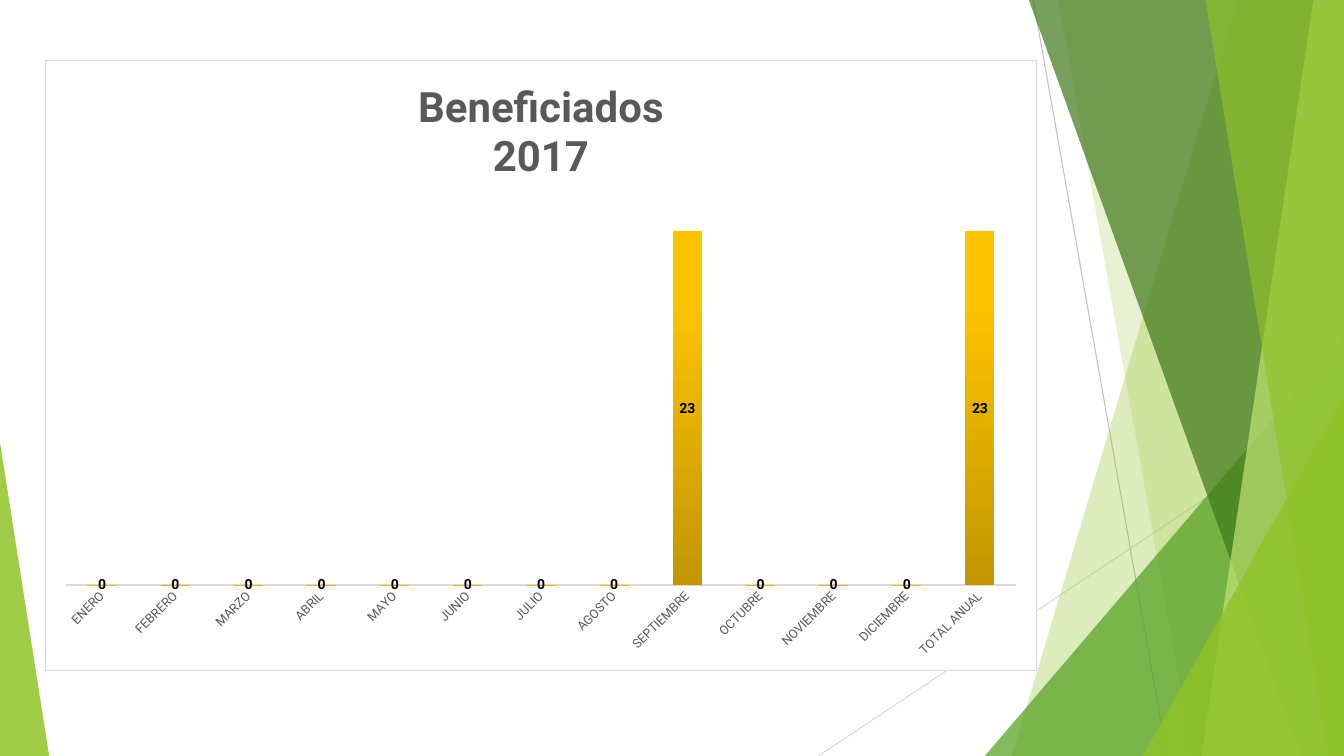
"""Build a slide with a yearly column chart beside green facets."""
from lxml import etree
from pptx import Presentation
from pptx.chart import data
from pptx.dml.color import RGBColor
from pptx.enum import chart as ch, shapes as sh
from pptx.oxml import ns, parse_xml
from pptx.util import Cm, Pt

HUES = {"lime": "90C226", "leaf": "54A021", "pine": "3F7819", "pale": "C0E474",
        "white": "FFFFFF", "black": "000000", "text": "595959",
        "rule": "D9D9D9", "gray": "BFBFBF",
        "dark": "C29600", "gold": "FCC300", "top": "FDC400"}
WIDE, HIGH = 33.87, 19.05
FONT = "Roboto"


def paint(shape, hue, alpha):
    """Fill a shape with a see-through colour and no outline."""
    shape.shadow.inherit = False
    shape.line.fill.background()
    shape.fill.solid()
    shape.fill.fore_color.rgb = RGBColor.from_string(HUES[hue])
    clr = shape._element.spPr.find(".//" + ns.qn("a:srgbClr"))
    etree.SubElement(clr, ns.qn("a:alpha"), val=str(alpha * 1000))


def style(font, size, hue, bold=False):
    """Set the face, size, colour and weight of a font."""
    font.name, font.size, font.bold = FONT, Pt(size), bold
    font.color.rgb = RGBColor.from_string(HUES[hue])


prs = Presentation()
prs.slide_width, prs.slide_height = Cm(WIDE), Cm(HIGH)
slide = prs.slides.add_slide(prs.slide_layouts[6])

for x1, y1, x2, hue in [(26.04, 0, 29.41, "gray"), (WIDE, 10.24, 20.62, "rule")]:
    line = slide.shapes.add_connector(
        sh.MSO_CONNECTOR.STRAIGHT, Cm(x1), Cm(y1), Cm(x2), Cm(HIGH))
    line.line.width = Pt(0.75)
    line.line.color.rgb = RGBColor.from_string(HUES[hue])
    etree.SubElement(line._element.spPr, ns.qn("a:effectLst"))

facets = [
    ("band", (31.19, 25.5), "lime", 30),
    ("band", (26.67, 30.05), "lime", 20),
    ("wedge", (24.82, 8.46, 9.05, 1), "leaf", 72),
    ("band", (25.93, 32.79), "pine", 70),
    ("band", (33.1, 30.28), "pale", 70),
    ("band", (30.38, 33.48), "lime", 65),
    ("wedge", (28.8, 9.98, 5.07, 1), "lime", 80),
    ("wedge", (0, 11.15, 1.24, 0), "lime", 85),
]
for kind, place, hue, alpha in facets:
    if kind == "band":
        top, foot = place
        pen = slide.shapes.build_freeform(Cm(top), 0)
        pen.add_line_segments([(Cm(WIDE), 0), (Cm(WIDE), Cm(HIGH)), (Cm(foot), Cm(HIGH))])
        facet = pen.convert_to_shape()
    else:
        left, top, width, peak = place
        facet = slide.shapes.add_shape(
            sh.MSO_SHAPE.ISOSCELES_TRIANGLE, Cm(left), Cm(top), Cm(width), Cm(HIGH - top))
        facet.adjustments[0] = peak
    paint(facet, hue, alpha)

months = ["ENERO", "FEBRERO", "MARZO", "ABRIL", "MAYO", "JUNIO", "JULIO", "AGOSTO",
          "SEPTIEMBRE", "OCTUBRE", "NOVIEMBRE", "DICIEMBRE", "TOTAL ANUAL"]
counts = {"SEPTIEMBRE": 23, "TOTAL ANUAL": 23}
table = data.CategoryChartData()
table.categories = months
table.add_series("Series 1", [counts.get(month, 0) for month in months])
chart = slide.shapes.add_chart(
    ch.XL_CHART_TYPE.COLUMN_STACKED, Cm(1.14), Cm(1.52), Cm(24.99), Cm(15.39), table).chart
style(chart.font, 10, "black")
chart.has_legend = False

chart.has_title = True
title = chart.chart_title
title.include_in_layout = False
title.text_frame.text = "Beneficiados\n2017"
for para in title.text_frame.paragraphs:
    style(para.font, 30, "text", True)

cat, val = chart.category_axis, chart.value_axis
cat.major_tick_mark = cat.minor_tick_mark = ch.XL_TICK_MARK.NONE
cat.format.line.width = Pt(1)
cat.format.line.color.rgb = RGBColor.from_string(HUES["rule"])
style(cat.tick_labels.font, 9, "text")
turn = cat._element.find(ns.qn("c:txPr")).find(ns.qn("a:bodyPr"))
turn.set("rot", "-2700000")
turn.set("vert", "horz")
val.visible = val.has_major_gridlines = False
val.minimum_scale, val.maximum_scale = 0, 23

plot = chart.plots[0]
plot.gap_width, plot.overlap, plot.vary_by_categories = 150, 100, False
bars = plot.series[0]
tags = bars.data_labels
tags.show_value = True
tags.position = ch.XL_LABEL_POSITION.CENTER
style(tags.font, 10, "black", True)

bars.format.fill.gradient()
bars.format.fill.gradient_angle = 90
stops = bars._element.find(".//" + ns.qn("a:gsLst"))
stops.clear()
for spot, hue in [(0, "dark"), (80, "gold"), (100, "top")]:
    stop = etree.SubElement(stops, ns.qn("a:gs"), pos=str(spot * 1000))
    etree.SubElement(stop, ns.qn("a:srgbClr"), val=HUES[hue])

area = chart._chartSpace.find(".//" + ns.qn("c:plotArea"))
for old in area.findall(ns.qn("c:layout")):
    area.remove(old)
frame = etree.Element(ns.qn("c:layout"))
area.insert(0, frame)
inner = etree.SubElement(frame, ns.qn("c:manualLayout"))
for tag, value in [("layoutTarget", "inner"), ("xMode", "edge"), ("yMode", "edge"),
                   ("x", "0.02"), ("y", "0.28"), ("w", "0.96"), ("h", "0.58")]:
    etree.SubElement(inner, ns.qn("c:" + tag), val=value)

panel = parse_xml(
    f'<c:spPr {ns.nsdecls("c", "a")}>'
    f'<a:solidFill><a:srgbClr val="{HUES["white"]}"/></a:solidFill>'
    f'<a:ln w="{Pt(0.75)}"><a:solidFill><a:srgbClr val="{HUES["rule"]}"/></a:solidFill></a:ln>'
    '</c:spPr>')
chart._chartSpace.find(ns.qn("c:chart")).addnext(panel)

prs.save("out.pptx")
